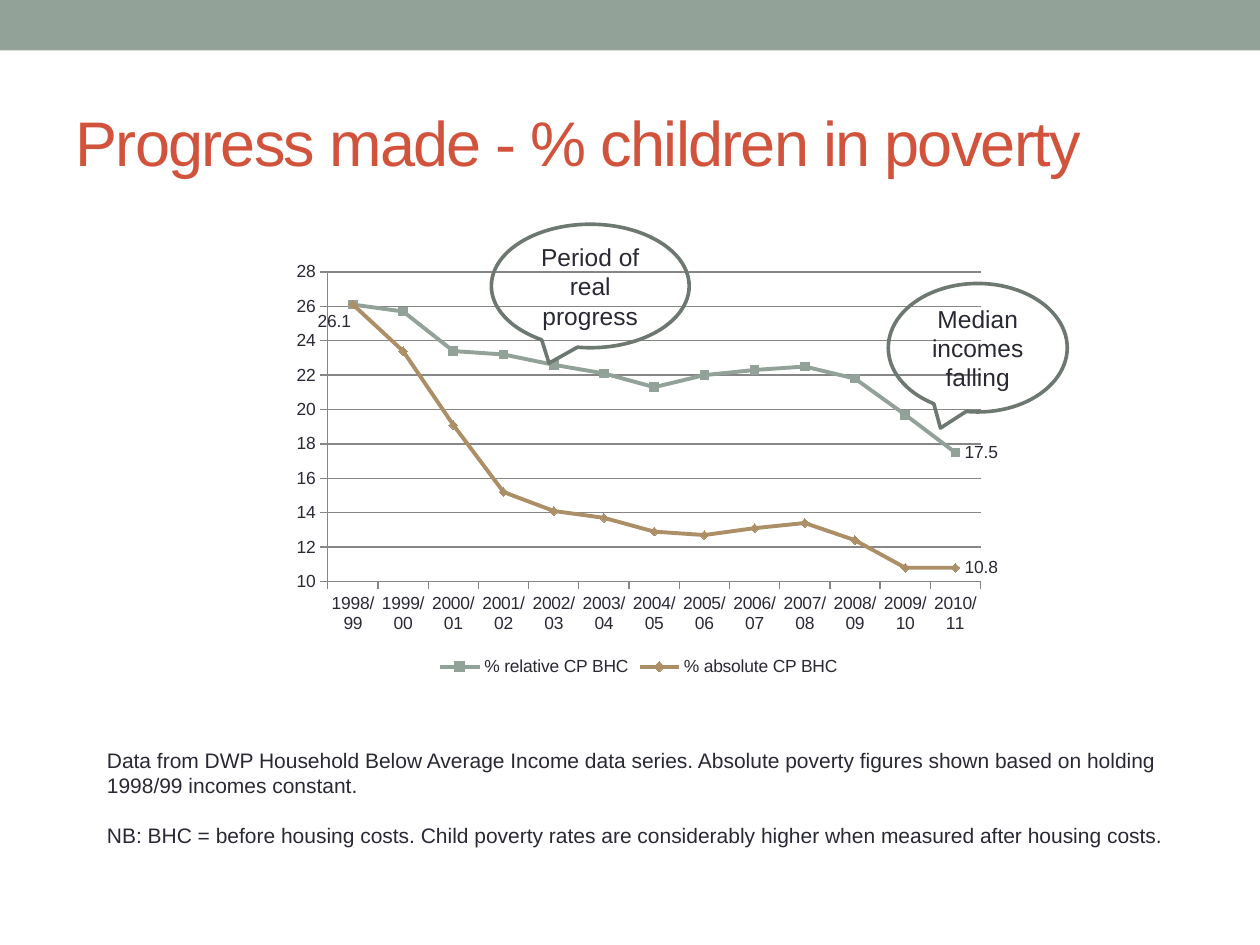
from lxml import etree
from pptx import Presentation
from pptx.chart.data import CategoryChartData
from pptx.dml.color import RGBColor
from pptx.enum.chart import XL_CHART_TYPE, XL_LABEL_POSITION, XL_LEGEND_POSITION, XL_TICK_MARK
from pptx.enum.shapes import MSO_SHAPE
from pptx.enum.text import MSO_ANCHOR, PP_ALIGN
from pptx.oxml.ns import qn
from pptx.util import Inches, Pt

LINE_CHART = XL_CHART_TYPE.LINE
LABEL_LEFT, LABEL_RIGHT = XL_LABEL_POSITION.LEFT, XL_LABEL_POSITION.RIGHT
LEGEND_BOTTOM = XL_LEGEND_POSITION.BOTTOM
TICK_OUT = XL_TICK_MARK.OUTSIDE
RECTANGLE, CALLOUT = MSO_SHAPE.RECTANGLE, MSO_SHAPE.OVAL_CALLOUT
MIDDLE, TOP = MSO_ANCHOR.MIDDLE, MSO_ANCHOR.TOP
LEFT, CENTER = PP_ALIGN.LEFT, PP_ALIGN.CENTER

SAGE = RGBColor(0x93, 0xA2, 0x99)
DARK_SAGE = RGBColor(0x6D, 0x78, 0x71)
TAN = RGBColor(0xAD, 0x8F, 0x67)
RUST = RGBColor(0xD2, 0x53, 0x3C)
INK = RGBColor(0x29, 0x29, 0x34)
GRID_GREY = RGBColor(0x86, 0x86, 0x86)

FONT = "Arial"
SLIDE_WIDTH, SLIDE_HEIGHT = Inches(10), Inches(7.5)
FIRST_YEAR, YEAR_COUNT = 1998, 13
RELATIVE = [26.1, 25.7, 23.4, 23.2, 22.6, 22.1, 21.3, 22, 22.3, 22.5, 21.8, 19.7, 17.5]
ABSOLUTE = [26.1, 23.4, 19.1, 15.2, 14.1, 13.7, 12.9, 12.7, 13.1, 13.4, 12.4, 10.8, 10.8]
NOTES = [
    "Data from DWP Household Below Average Income data series. "
    "Absolute poverty figures shown based on holding 1998/99 incomes constant.",
    "NB: BHC = before housing costs. Child poverty rates are considerably "
    "higher when measured after housing costs.",
]


def area(left, top, width, height):
    """Turn percentages of the slide into a position and size."""
    return (int(SLIDE_WIDTH * left / 100), int(SLIDE_HEIGHT * top / 100),
            int(SLIDE_WIDTH * width / 100), int(SLIDE_HEIGHT * height / 100))


def write(holder, *paragraphs, size, color=INK, align=LEFT, anchor=TOP, gap=0, tracking=0):
    frame = holder.text_frame
    frame.word_wrap = True
    frame.vertical_anchor = anchor
    for index, wording in enumerate(paragraphs):
        paragraph = frame.add_paragraph() if index else frame.paragraphs[0]
        paragraph.alignment = align
        paragraph.space_before = Pt(gap if index else 0)
        run = paragraph.add_run()
        run.text = wording
        run.font.name = FONT
        run.font.size = Pt(size)
        run.font.color.rgb = color
        if tracking:
            run.font._element.set("spc", str(tracking * 100))


def add_title(slide, wording):
    title = slide.shapes.title
    title.left, title.top, title.width, title.height = area(5, 7.73, 90, 14.4)
    write(title, wording, size=36, color=RUST, anchor=MIDDLE, tracking=-1)


def add_band(slide):
    band = slide.shapes.add_shape(RECTANGLE, *area(0, 0, 100, 5.33))
    band.shadow.inherit = False
    band.fill.solid()
    band.fill.fore_color.rgb = SAGE
    band.line.fill.background()


def add_callout(slide, wording, place):
    callout = slide.shapes.add_shape(CALLOUT, *area(*place))
    callout.shadow.inherit = False
    callout.fill.background()
    callout.line.color.rgb = DARK_SAGE
    callout.line.width = Pt(2.08)
    write(callout, wording, size=14, align=CENTER, anchor=MIDDLE)


def manual_layout(**settings):
    """Build a chart layout element from its settings in schema order."""
    layout = etree.Element(qn("c:layout"))
    manual = etree.SubElement(layout, qn("c:manualLayout"))
    for name, value in settings.items():
        etree.SubElement(manual, qn(f"c:{name}")).set("val", str(value))
    return layout


def style_axis(axis):
    axis.major_tick_mark = TICK_OUT
    axis.minor_tick_mark = XL_TICK_MARK.NONE
    style_line(axis.format.line, GRID_GREY, 0.75)


def style_line(line, color, width):
    line.color.rgb = color
    line.width = Pt(width)


def add_poverty_chart(slide):
    data = CategoryChartData()
    data.categories = [f"{year}/{(year + 1) % 100:02d}"
                       for year in range(FIRST_YEAR, FIRST_YEAR + YEAR_COUNT)]
    data.add_series("% relative CP BHC", RELATIVE)
    data.add_series("% absolute CP BHC", ABSOLUTE)
    chart = slide.shapes.add_chart(LINE_CHART, *area(22.4, 26.93, 56.8, 45.2), data).chart
    chart.has_title = False
    chart.font.name = FONT
    chart.font.size = Pt(10)
    chart.font.color.rgb = INK
    chart.has_legend = True
    chart.legend.position = LEGEND_BOTTOM
    chart.legend.include_in_layout = False

    style_axis(chart.category_axis)
    rates = chart.value_axis
    style_axis(rates)
    rates.minimum_scale, rates.maximum_scale, rates.major_unit = 10, 28, 2
    rates.has_major_gridlines = True
    style_line(rates.major_gridlines.format.line, GRID_GREY, 0.75)

    plot = chart.plots[0]
    plot.vary_by_categories = False
    for series, color in zip(plot.series, (SAGE, TAN)):
        series.smooth = False
        style_line(series.format.line, color, 2.25)
        series.marker.style = None
        series.points[YEAR_COUNT - 1].data_label.position = LABEL_RIGHT

    plot.series[1].points[0].data_label.position = LABEL_LEFT
    start_label = plot.series[1]._element.find(f".//{qn('c:dLbl')}")
    start_label.insert(1, manual_layout(x=0.01, y=0.04))

    plot_area = chart._chartSpace.find(f".//{qn('c:plotArea')}")
    for layout in plot_area.findall(qn("c:layout")):
        plot_area.remove(layout)
    plot_area.insert(0, manual_layout(layoutTarget="inner", xMode="edge", yMode="edge",
                                      x=0.064, y=0.041, w=0.916, h=0.725))


def add_notes(slide):
    box = slide.shapes.add_textbox(*area(7.5, 78.4, 89.8, 12.13))
    write(box, *NOTES, size=12, gap=14.4)


def main():
    presentation = Presentation()
    presentation.slide_width, presentation.slide_height = SLIDE_WIDTH, SLIDE_HEIGHT
    slide = presentation.slides.add_slide(presentation.slide_layouts[5])
    add_band(slide)
    add_title(slide, "Progress made - % children in poverty")
    add_poverty_chart(slide)
    add_notes(slide)
    add_callout(slide, "Median incomes falling", (70.5, 30, 14.2, 13.6))
    add_callout(slide, "Period of real progress", (39, 23.73, 15.7, 13.07))
    presentation.save("out.pptx")


if __name__ == "__main__":
    main()
